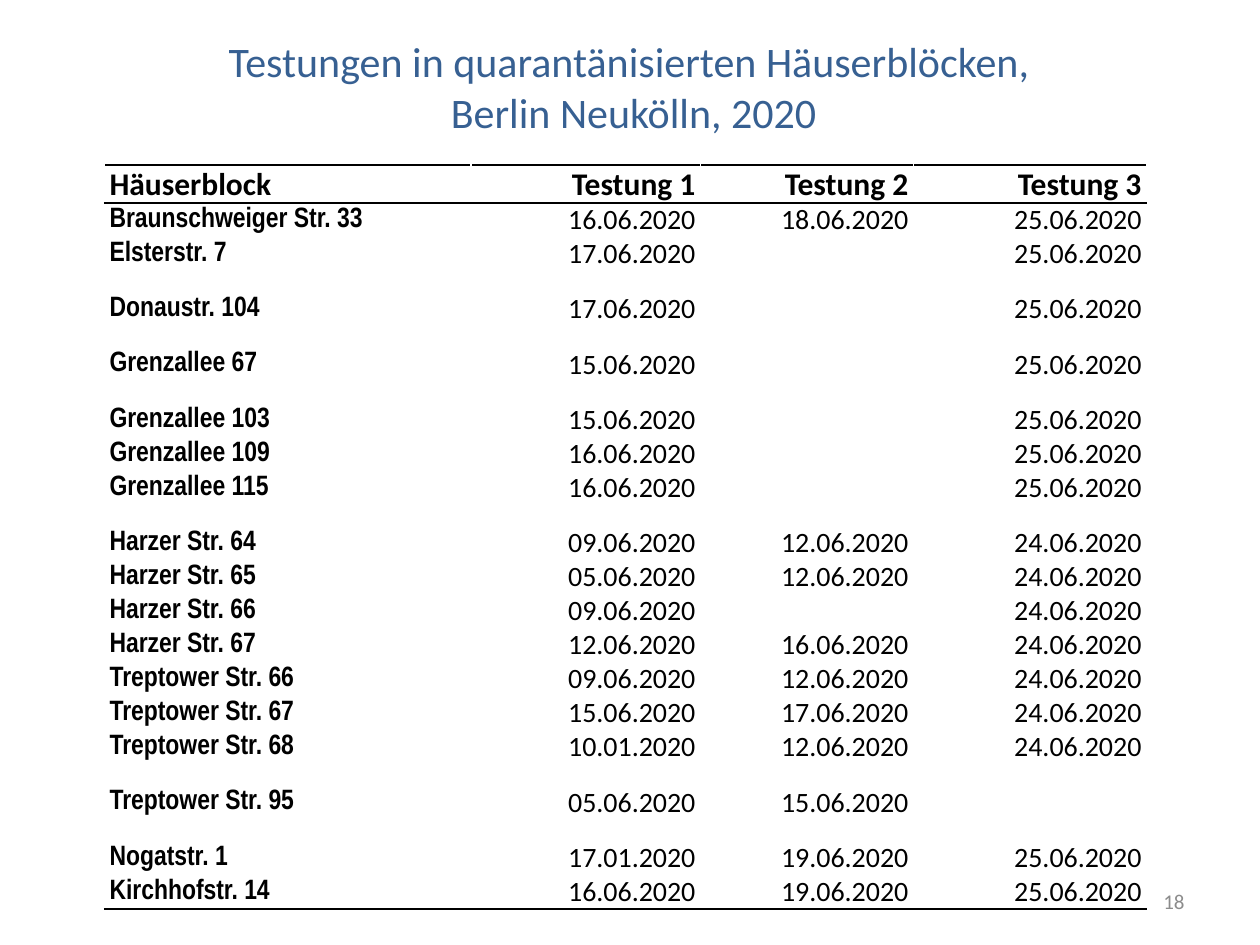
from pptx import Presentation
from pptx.dml.color import RGBColor
from pptx.enum.text import MSO_ANCHOR, PP_ALIGN
from pptx.oxml.ns import qn
from pptx.util import Inches, Pt
from lxml.etree import SubElement

BLACK = RGBColor(0x00, 0x00, 0x00)
WHITE = RGBColor(0xFF, 0xFF, 0xFF)
BLUE = RGBColor(0x37, 0x60, 0x92)
GREY = RGBColor(0x8C, 0x8C, 0x8C)

# Content: each group of blocks is set off from the next by a low empty row
TITLE = "Testungen in quarantänisierten Häuserblöcken, \vBerlin Neukölln, 2020"
PAGE_NUMBER = "18"
HEADER = ("Häuserblock", "Testung 1", "Testung 2", "Testung 3")
GROUPS = [
    [("Braunschweiger Str. 33", "16.06.2020", "18.06.2020", "25.06.2020"),
     ("Elsterstr. 7", "17.06.2020", "", "25.06.2020")],
    [("Donaustr. 104", "17.06.2020", "", "25.06.2020")],
    [("Grenzallee 67", "15.06.2020", "", "25.06.2020")],
    [("Grenzallee 103", "15.06.2020", "", "25.06.2020"),
     ("Grenzallee 109", "16.06.2020", "", "25.06.2020"),
     ("Grenzallee 115", "16.06.2020", "", "25.06.2020")],
    [("Harzer Str. 64", "09.06.2020", "12.06.2020", "24.06.2020"),
     ("Harzer Str. 65", "05.06.2020", "12.06.2020", "24.06.2020"),
     ("Harzer Str. 66", "09.06.2020", "", "24.06.2020"),
     ("Harzer Str. 67", "12.06.2020", "16.06.2020", "24.06.2020"),
     ("Treptower Str. 66", "09.06.2020", "12.06.2020", "24.06.2020"),
     ("Treptower Str. 67", "15.06.2020", "17.06.2020", "24.06.2020"),
     ("Treptower Str. 68", "10.01.2020", "12.06.2020", "24.06.2020")],
    [("Treptower Str. 95", "05.06.2020", "15.06.2020", "")],
    [("Nogatstr. 1", "17.01.2020", "19.06.2020", "25.06.2020"),
     ("Kirchhofstr. 14", "16.06.2020", "19.06.2020", "25.06.2020")],
]
SPACER = ("",) * len(HEADER)

# Table measures in inches
TABLE_LEFT, TABLE_TOP = 0.83, 1.31
COLUMN_WIDTHS = (2.91, 1.82, 1.69, 1.85)
HEADER_HEIGHT, BLOCK_HEIGHT, SPACER_HEIGHT = 0.3, 0.27, 0.17


def write(frame, text, size, color=BLACK, font="Calibri", bold=False,
          align=PP_ALIGN.LEFT):
    paragraph = frame.paragraphs[0]
    paragraph.alignment = align
    paragraph.text = text
    for run in paragraph.runs:
        run.font.size = Pt(size)
        run.font.name = font
        run.font.bold = bold
        run.font.color.rgb = color
    if not text:  # an empty cell still needs a size to keep its row low
        SubElement(paragraph._p, qn("a:endParaRPr"), sz=str(size * 100))


def add_text(slide, box, text, size, **style):
    frame = slide.shapes.add_textbox(*map(Inches, box)).text_frame
    frame.word_wrap = True
    frame.vertical_anchor = MSO_ANCHOR.MIDDLE
    write(frame, text, size, **style)


def set_borders(cell, top, bottom):
    properties = cell._tc.get_or_add_tcPr()
    sides = (("a:lnL", WHITE), ("a:lnR", WHITE), ("a:lnT", top), ("a:lnB", bottom))
    for position, (side, color) in enumerate(sides):
        line = SubElement(properties, qn(side), w=str(Pt(1)))
        fill = SubElement(line, qn("a:solidFill"))
        SubElement(fill, qn("a:srgbClr"), val=str(color))
        properties.insert(position, line)


def add_test_table(slide):
    rows = [HEADER]
    for group in GROUPS:
        if len(rows) > 1:
            rows.append(SPACER)
        rows.extend(group)
    heights = [HEADER_HEIGHT] + [
        BLOCK_HEIGHT if row[0] else SPACER_HEIGHT for row in rows[1:]]

    table = slide.shapes.add_table(
        len(rows), len(HEADER), Inches(TABLE_LEFT), Inches(TABLE_TOP),
        Inches(sum(COLUMN_WIDTHS)), Inches(sum(heights))).table
    table.first_row = table.horz_banding = False
    for column, width in zip(table.columns, COLUMN_WIDTHS):
        column.width = Inches(width)

    last = len(rows) - 1
    for r, (row, height) in enumerate(zip(rows, heights)):
        table.rows[r].height = Inches(height)
        is_header = r == 0
        size = 18 if is_header else 16 if row[0] else 8
        for c, text in enumerate(row):
            cell = table.cell(r, c)
            cell.margin_left = cell.margin_right = Inches(0.04)
            cell.margin_top = cell.margin_bottom = 0
            cell.vertical_anchor = MSO_ANCHOR.BOTTOM if is_header else MSO_ANCHOR.MIDDLE
            cell.fill.background()
            set_borders(cell, top=BLACK if r <= 1 else WHITE,
                        bottom=BLACK if r in (0, last) else WHITE)
            write(cell.text_frame, text, size,
                  font="Arial Narrow" if c == 0 and not is_header else "Calibri",
                  bold=is_header or c == 0,
                  align=PP_ALIGN.LEFT if c == 0 else PP_ALIGN.RIGHT)


def main():
    presentation = Presentation()
    presentation.slide_width, presentation.slide_height = Inches(10), Inches(7.5)
    slide = presentation.slides.add_slide(presentation.slide_layouts[6])

    # Page number, title and table
    add_text(slide, (7.17, 6.95, 2.33, 0.4), PAGE_NUMBER, 12, color=GREY,
             align=PP_ALIGN.RIGHT)
    add_text(slide, (0.28, 0.06, 9.5, 1.25), TITLE, 24, color=BLUE,
             align=PP_ALIGN.CENTER)
    add_test_table(slide)
    presentation.save("out.pptx")


if __name__ == "__main__":
    main()
